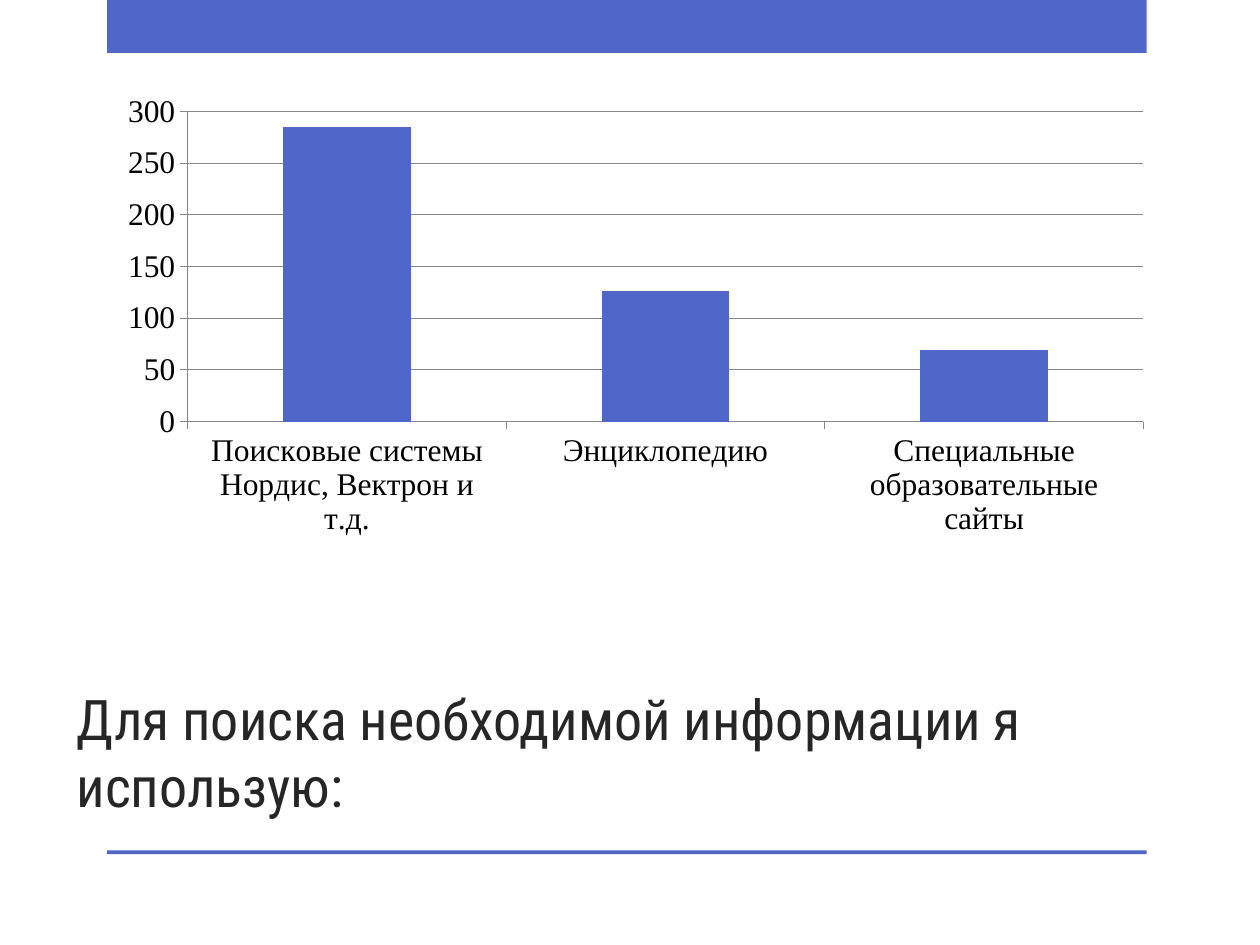
import pptx
import pptx.chart.data
import pptx.dml.color
import pptx.enum.chart
import pptx.enum.shapes
import pptx.enum.text
import pptx.oxml
import pptx.oxml.ns
import pptx.util

Inches = pptx.util.Inches
Pt = pptx.util.Pt


def color(value):
    return pptx.dml.color.RGBColor.from_string(value)


def write_text(tf, text, font="Roboto Condensed", size=32, fill="262626"):
    p = tf.paragraphs[0]
    r = p.add_run()
    r.text = text
    r.font.name = font
    r.font.size = Pt(size)
    r.font.color.rgb = color(fill)


class SlideBuilder:
    accent = "4E67C8"
    grid = "868686"
    chart_font = "Times New Roman"

    def __init__(self, prs):
        self.s = prs.slides.add_slide(prs.slide_layouts[6])

    def bar(self, left, top, width, height):
        sp = self.s.shapes.add_shape(
            pptx.enum.shapes.MSO_SHAPE.RECTANGLE,
            Inches(left), Inches(top), Inches(width), Inches(height))
        sp.shadow.inherit = False
        sp.fill.solid()
        sp.fill.fore_color.rgb = color(self.accent)
        sp.line.fill.background()

    def title(self, text, left, top, width, height):
        sp = self.s.shapes.add_textbox(
            Inches(left), Inches(top), Inches(width), Inches(height))
        tf = sp.text_frame
        tf.word_wrap = True
        tf.vertical_anchor = pptx.enum.text.MSO_ANCHOR.BOTTOM
        write_text(tf, text)

    def column_chart(self, values, left, top, width, height, plot):
        data = pptx.chart.data.CategoryChartData()
        data.categories = list(values)
        data.add_series("Series 1", list(values.values()))
        chart = self.s.shapes.add_chart(
            pptx.enum.chart.XL_CHART_TYPE.COLUMN_CLUSTERED,
            Inches(left), Inches(top), Inches(width), Inches(height), data).chart
        chart.has_title = False
        chart.has_legend = False
        chart.font.name = self.chart_font
        chart.font.size = Pt(18)
        chart.font.color.rgb = color("000000")

        bars = chart.plots[0]
        bars.gap_width = 150
        bars.vary_by_categories = False
        fill = bars.series[0].format.fill
        fill.solid()
        fill.fore_color.rgb = color(self.accent)

        value_axis = chart.value_axis
        value_axis.minimum_scale = 0
        value_axis.maximum_scale = 300
        value_axis.major_unit = 50
        value_axis.has_major_gridlines = True
        for axis in (chart.category_axis, value_axis):
            axis.major_tick_mark = pptx.enum.chart.XL_TICK_MARK.OUTSIDE
        for item in (chart.category_axis, value_axis, value_axis.major_gridlines):
            item.format.line.color.rgb = color(self.grid)
            item.format.line.width = Pt(0.75)
        self.place_plot(chart, plot)

    def place_plot(self, chart, plot):
        qn = pptx.oxml.ns.qn
        area = chart.element.find(qn("c:chart")).find(qn("c:plotArea"))
        for old in area.findall(qn("c:layout")):
            area.remove(old)
        settings = [("layoutTarget", "inner"), ("xMode", "edge"), ("yMode", "edge")]
        settings += zip("xywh", plot)
        items = "".join(f'<c:{name} val="{value}"/>' for name, value in settings)
        area.insert(0, pptx.oxml.parse_xml(
            f'<c:layout {pptx.oxml.ns.nsdecls("c")}>'
            f"<c:manualLayout>{items}</c:manualLayout></c:layout>"))


def main():
    prs = pptx.Presentation()
    prs.slide_width = Inches(10)
    prs.slide_height = Inches(7.5)
    slide = SlideBuilder(prs)
    for top, height in ((0, 0.42), (6.75, 0.03)):
        slide.bar(0.85, top, 8.25, height)
    slide.title("Для поиска необходимой информации я использую:", 0.51, 5.4, 9, 1.15)
    answers = {
        "Поисковые системы Нордис, Вектрон и т.д.": 285,
        "Энциклопедию": 126,
        "Специальные образовательные сайты": 69,
    }
    slide.column_chart(answers, 0.83, 0.75, 8.25, 4.25, (0.08, 0.03, 0.92, 0.58))
    prs.save("out.pptx")


if __name__ == "__main__":
    main()
